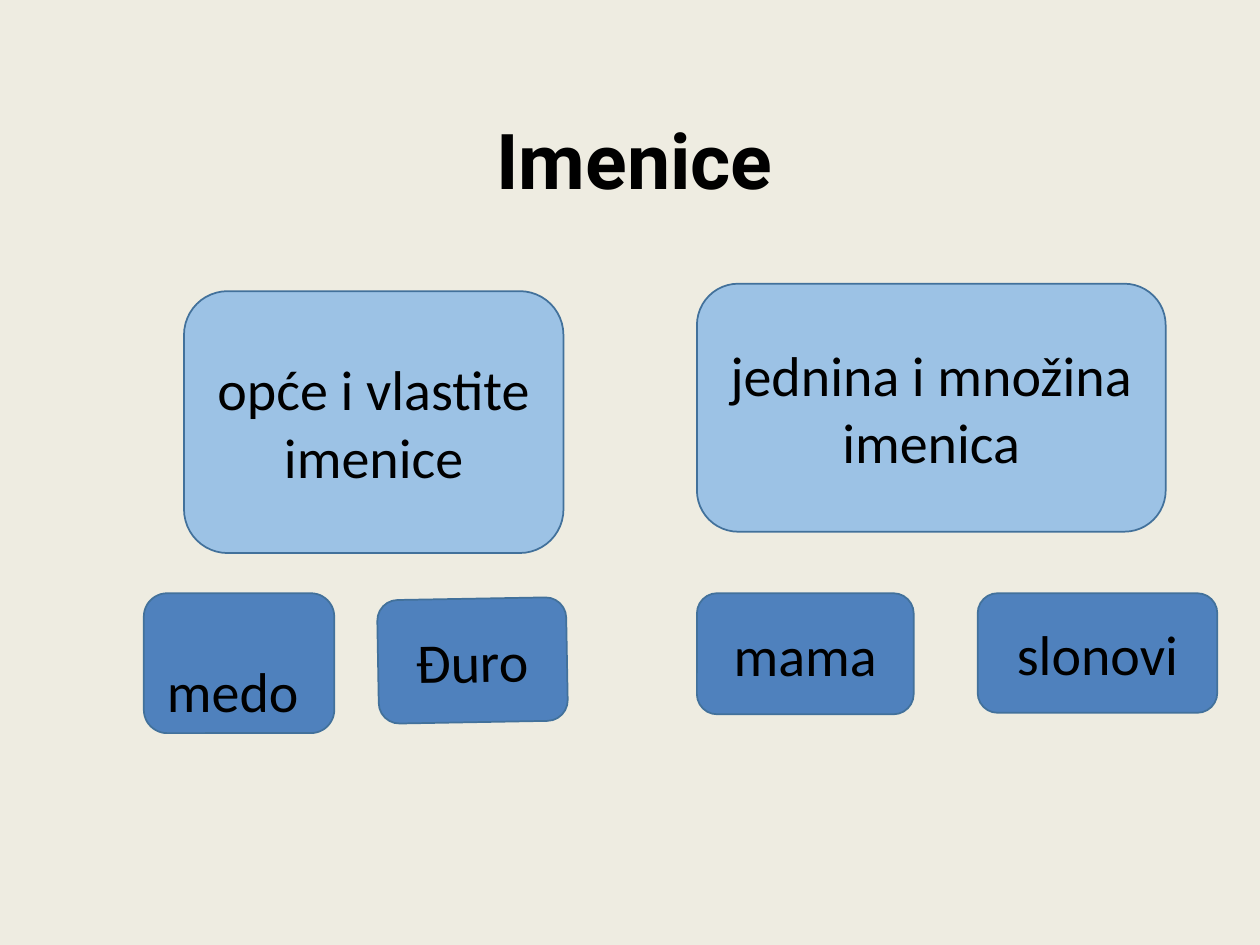
from dataclasses import dataclass, field

from pptx import Presentation
from pptx.dml.color import RGBColor
from pptx.enum.shapes import MSO_SHAPE
from pptx.enum.text import MSO_ANCHOR, PP_ALIGN
from pptx.slide import Slide
from pptx.text.text import TextFrame
from pptx.util import Cm, Pt

BACKGROUND = RGBColor(0xEE, 0xEC, 0xE1)
TOPIC_FILL = RGBColor(0x9C, 0xC2, 0xE5)
EXAMPLE_FILL = RGBColor(0x4F, 0x81, 0xBD)
OUTLINE = RGBColor(0x42, 0x71, 0x9B)
TEXT_COLOR = RGBColor(0, 0, 0)

BODY_FONT = {"name": "Calibri", "size": Pt(32)}
TITLE_FONT = {"name": "Roboto", "size": Pt(44), "bold": True}
FRAME_FORMAT = {
    "word_wrap": True,
    "vertical_anchor": MSO_ANCHOR.MIDDLE,
    "margin_left": Cm(0.25),
    "margin_right": Cm(0.25),
    "margin_top": Cm(0.13),
    "margin_bottom": Cm(0.13),
}
LOW_TEXT = {
    "vertical_anchor": MSO_ANCHOR.BOTTOM,
    "margin_bottom": Cm(0.05),
    "margin_right": Cm(0.5),
}
EXAMPLE_TOP = 11.96
PLURAL_LEFT = 14.05


@dataclass(frozen=True)
class Card:
    lines: tuple[str, ...]
    left: float
    top: float
    width: float
    height: float
    fill: RGBColor = EXAMPLE_FILL
    rotation: float = 0
    frame_format: dict = field(default_factory=dict)


CARDS = (
    Card(("opće i vlastite imenice",), 3.71, 5.87, 7.65, 5.28, TOPIC_FILL),
    Card(("jednina i množina", "imenica"), PLURAL_LEFT, 5.72, 9.45, 5, TOPIC_FILL),
    Card(("medo",), 2.9, EXAMPLE_TOP, 3.84, 2.82, frame_format=LOW_TEXT),
    Card(("Đuro",), 7.62, 12.07, 3.81, 2.49, rotation=359),
    Card(("mama",), PLURAL_LEFT, EXAMPLE_TOP, 4.37, 2.44),
    Card(("slonovi",), 19.71, EXAMPLE_TOP, 4.83, 2.41),
)


def apply_format(target: object, values: dict) -> None:
    for name, value in values.items():
        setattr(target, name, value)


def write_lines(
    frame: TextFrame, lines: tuple[str, ...], font: dict, frame_format: dict
) -> None:
    apply_format(frame, FRAME_FORMAT | frame_format)
    frame.text = "\n".join(lines)
    for paragraph in frame.paragraphs:
        paragraph.alignment = PP_ALIGN.CENTER
        for run in paragraph.runs:
            apply_format(run.font, font)
            run.font.color.rgb = TEXT_COLOR


def draw_card(slide: Slide, card: Card) -> None:
    shape = slide.shapes.add_shape(
        MSO_SHAPE.ROUNDED_RECTANGLE,
        Cm(card.left), Cm(card.top), Cm(card.width), Cm(card.height),
    )
    shape.rotation = card.rotation
    shape.shadow.inherit = False
    shape.fill.solid()
    shape.fill.fore_color.rgb = card.fill
    shape.line.color.rgb = OUTLINE
    shape.line.width = Pt(1)
    write_lines(shape.text_frame, card.lines, BODY_FONT, card.frame_format)


def draw_title(slide: Slide, title: str) -> None:
    shape = slide.shapes.add_textbox(Cm(1.85), Cm(1.47), Cm(21.89), Cm(3.68))
    write_lines(shape.text_frame, (title,), TITLE_FONT, {})
    shape.text_frame.paragraphs[0].line_spacing = 0.9


def main() -> None:
    presentation = Presentation()
    presentation.slide_width = Cm(25.4)
    presentation.slide_height = Cm(19.05)
    slide = presentation.slides.add_slide(presentation.slide_layouts[6])
    slide.background.fill.solid()
    slide.background.fill.fore_color.rgb = BACKGROUND
    for card in CARDS:
        draw_card(slide, card)
    draw_title(slide, "Imenice")
    presentation.save("out.pptx")


if __name__ == "__main__":
    main()
